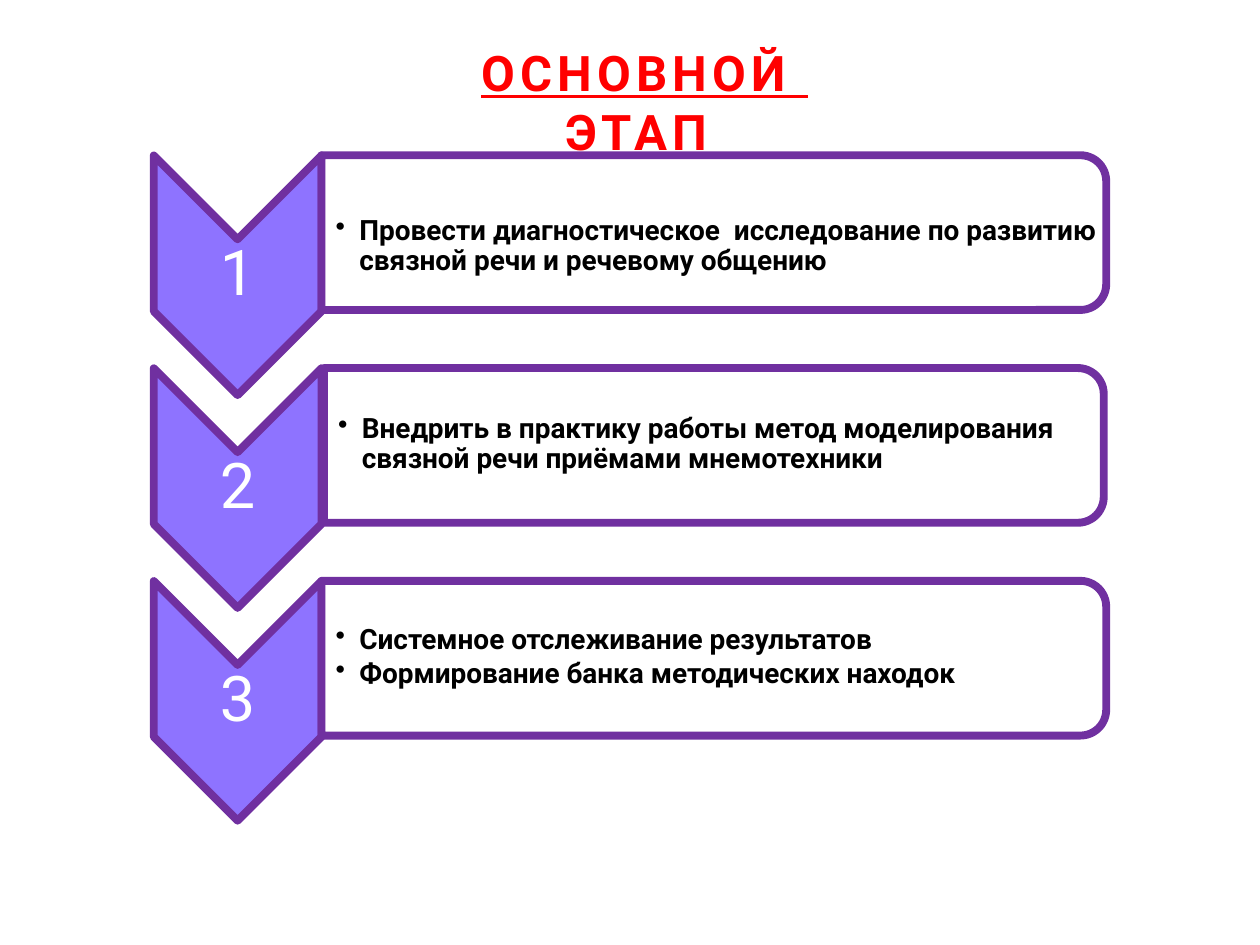
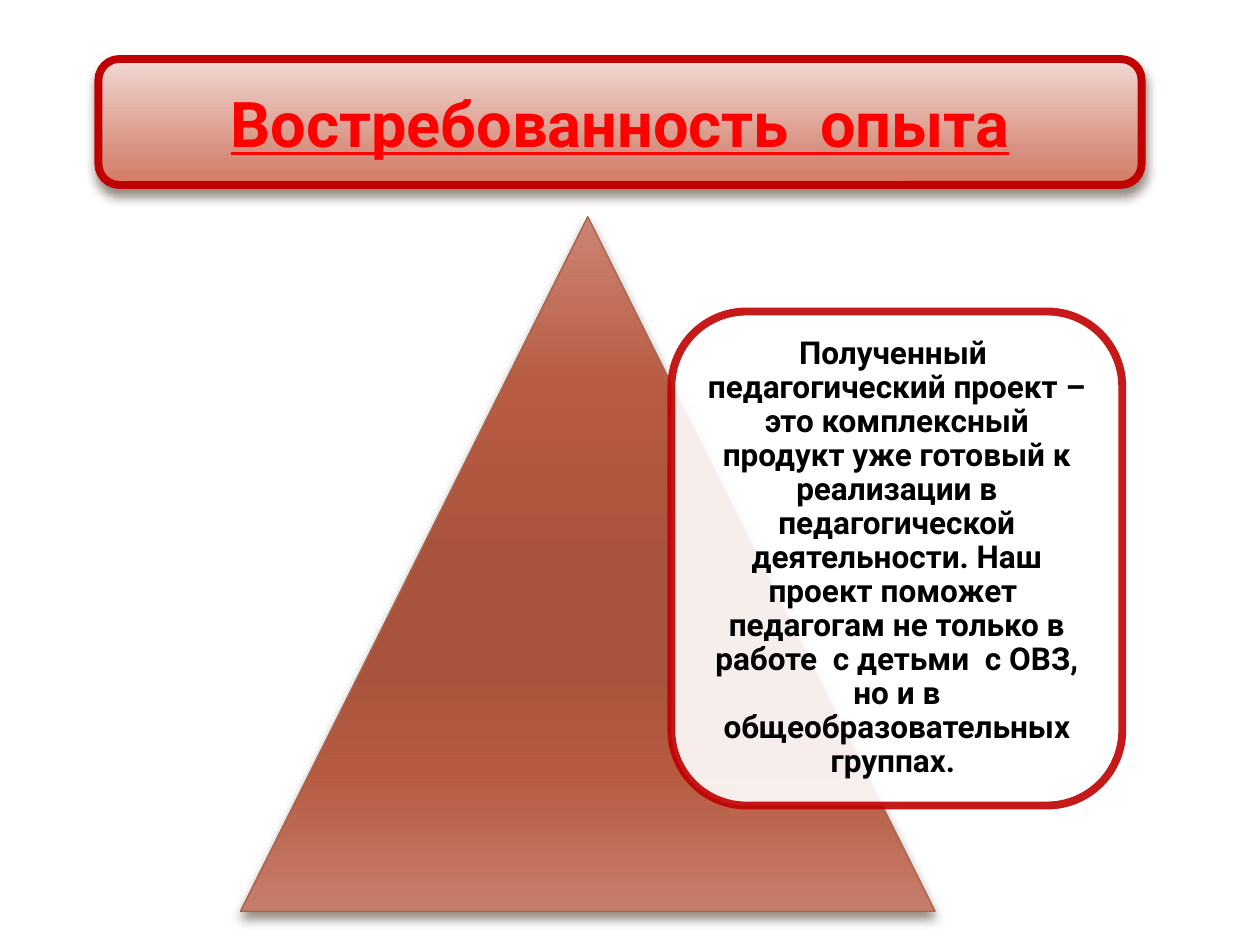
"""Builds two slides: the three steps of the main stage and the demand for the experience."""
from lxml.etree import SubElement
from pptx import Presentation
from pptx.dml.color import RGBColor
from pptx.enum.shapes import MSO_SHAPE as Preset
from pptx.enum.text import MSO_ANCHOR as Anchor, MSO_AUTO_SIZE as AutoSize, PP_ALIGN as Align
from pptx.oxml.ns import qn
from pptx.util import Cm, Pt

FONT = "Roboto"
RED = RGBColor(0xFF, 0x00, 0x00)
DARK_RED = RGBColor(0xC0, 0x00, 0x00)
BROWN = RGBColor(0xA5, 0x64, 0x4E)
SHADOW = RGBColor(0x4E, 0x3B, 0x30)
PURPLE = RGBColor(0x70, 0x30, 0xA0)
VIOLET = RGBColor(0x8E, 0x73, 0xFF)
WHITE = RGBColor(0xFF, 0xFF, 0xFF)
BLACK = RGBColor(0x00, 0x00, 0x00)
BAND_STOPS = [(0, "F1D9D4"), (72, "D89180"), (100, "D47A62")]
PYRAMID_STOPS = [(0, "CD8473"), (25, "B75B42"), (50, "AA533C"),
                 (65, "AA533C"), (80, "B65B42"), (100, "C77D6B")]

STEP_PITCH = 4.29
STEPS = [
    (15.82, 0.6, ["Провести диагностическое  исследование по развитию связной речи и речевому общению"]),
    (15.72, 0, ["Внедрить в практику работы метод моделирования связной речи приёмами мнемотехники"]),
    (15.82, 0, ["Системное отслеживание результатов", "Формирование банка методических находок"]),
]
RESULT = ("Полученный  педагогический проект – это комплексный продукт уже готовый к реализации "
          "в педагогической деятельности. Наш проект поможет  педагогам не только в работе  "
          "с детьми  с ОВЗ, но и в общеобразовательных группах. ")


class SlideBuilder:
    """Holds the deck style and the slide being built; positions are centres in centimetres."""

    def __init__(self):
        self.deck = Presentation()
        self.deck.slide_width, self.deck.slide_height = Cm(25.4), Cm(19.05)
        self.page = None

    def new_page(self):
        """Start a title-only slide."""
        self.page = self.deck.slides.add_slide(self.deck.slide_layouts[5])

    def frame(self, x, y, width, height):
        """Turn a centre and a size into left, top, width and height."""
        return Cm(x - width / 2), Cm(y - height / 2), Cm(width), Cm(height)

    def span(self, para, text, size, color, bold=False):
        """Add one run of text."""
        span = para.add_run()
        span.text = text
        span.font.name, span.font.size, span.font.bold = FONT, Pt(size), bold
        span.font.color.rgb = color
        return span

    def title(self, text, size, x, y, width, height, anchor, spacing=0):
        """Place the underlined red title above what is already drawn."""
        title = self.page.shapes.title
        title.left, title.top, title.width, title.height = self.frame(x, y, width, height)
        self.page.shapes._spTree.append(title._element)
        body = title.text_frame
        body.word_wrap, body.auto_size, body.vertical_anchor = True, AutoSize.NONE, anchor
        para = body.paragraphs[0]
        para.alignment = Align.CENTER
        span = self.span(para, text, size, RED, bold=True)
        span.font.underline = True
        span.font._element.set("spc", str(spacing * 100))

    def alpha(self, fill, percent):
        """Make a solid fill partly transparent."""
        color = fill._xPr.find(qn("a:solidFill"))[0]
        SubElement(color, qn("a:alpha"), val=str(percent * 1000))

    def shape(self, preset, x, y, width, height, line, line_width=4.5, fill=WHITE,
              stops=None, rotation=0, opacity=None, line_opacity=None, shadow=False):
        """Draw a preset shape with a solid or a vertical gradient fill."""
        shape = self.page.shapes.add_shape(preset, *self.frame(x, y, width, height))
        shape.rotation = rotation
        shape.shadow.inherit = False
        shape.line.color.rgb, shape.line.width = line, Pt(line_width)
        if stops:
            self.gradient(shape, stops)
        else:
            shape.fill.solid()
            shape.fill.fore_color.rgb = fill
        if opacity:
            self.alpha(shape.fill, opacity)
        if line_opacity:
            self.alpha(shape.line.fill, line_opacity)
        if shadow:
            effects = shape._element.spPr.find(qn("a:effectLst"))
            outer = SubElement(effects, qn("a:outerShdw"), blurRad=str(Pt(6)), dist=str(Pt(4)),
                               dir="5400000", rotWithShape="0")
            color = SubElement(outer, qn("a:srgbClr"), val=str(SHADOW))
            SubElement(color, qn("a:alpha"), val="60000")

    def gradient(self, shape, stops):
        """Fill a shape from top to bottom with the given stops."""
        shape.fill.gradient()
        shape.fill.gradient_angle = 270
        stop_list = shape._element.spPr.find(".//" + qn("a:gsLst"))
        for stop in list(stop_list):
            stop_list.remove(stop)
        for position, color in stops:
            stop = SubElement(stop_list, qn("a:gs"), pos=str(position * 1000))
            SubElement(stop, qn("a:srgbClr"), val=color)

    def text(self, lines, size, x, y, width, height, color=BLACK, bold=True,
             insets=(0.18, 0.18, 0.18, 0.18), bullets=False):
        """Add a middle-anchored text box, centred or bulleted."""
        box = self.page.shapes.add_textbox(*self.frame(x, y, width, height))
        body = box.text_frame
        body.word_wrap, body.vertical_anchor = True, Anchor.MIDDLE
        body.margin_left, body.margin_top, body.margin_right, body.margin_bottom = map(Cm, insets)
        for index, line in enumerate(lines):
            para = body.add_paragraph() if index else body.paragraphs[0]
            para.line_spacing = 0.9
            para.alignment = Align.LEFT if bullets else Align.CENTER
            if bullets:
                para.space_after = Pt(2.4)
                properties = para._p.get_or_add_pPr()
                properties.set("marL", str(Cm(0.48)))
                properties.set("indent", str(-Cm(0.48)))
                SubElement(properties, qn("a:buChar"), char="•")
            self.span(para, line, size, color, bold)


def build_main_stage(builder):
    """Build the slide with three numbered steps."""
    builder.new_page()
    builder.title("ОСНОВНОЙ  ЭТАП ", 28, 13, 1.46, 10.21, 1.45, Anchor.TOP, spacing=3)
    for index, (width, top_inset, lines) in enumerate(STEPS):
        arrow_y = 5.55 + index * STEP_PITCH
        panel_y = 4.69 + index * STEP_PITCH
        builder.shape(Preset.CHEVRON, 4.79, arrow_y, 4.83, 3.38, PURPLE, fill=VIOLET, rotation=90)
        builder.text([str(index + 1)], 36, 4.79, arrow_y, 3.38, 1.45, WHITE, bold=False,
                     insets=(0.08, 0.08, 0.08, 0.08))
        builder.shape(Preset.ROUND_2_SAME_RECTANGLE, 14.39, panel_y, 3.12, width, PURPLE,
                      rotation=90, opacity=90)
        builder.text(lines, 16, 14.31, panel_y, width - 0.15, 2.82,
                     insets=(0.29, top_inset, 0.03, 0.03), bullets=True)


def build_demand(builder):
    """Build the slide with the pyramid and the result of the project."""
    builder.new_page()
    band = (12.5, 2.46, 21.03, 2.54)
    builder.shape(Preset.ROUNDED_RECTANGLE, *band, DARK_RED, stops=BAND_STOPS, shadow=True)
    builder.title("Востребованность  опыта", 36, *band, Anchor.MIDDLE)
    builder.shape(Preset.ISOSCELES_TRIANGLE, 11.85, 11.37, 14, 14, BROWN, 0.79,
                  stops=PYRAMID_STOPS, shadow=True)
    builder.shape(Preset.ROUNDED_RECTANGLE, 18.08, 11.26, 9.09, 9.96, DARK_RED,
                  opacity=90, line_opacity=90)
    builder.text([RESULT], 18, 18.08, 11.26, 8.2, 9.07)


def main():
    """Build and save the deck."""
    builder = SlideBuilder()
    build_main_stage(builder)
    build_demand(builder)
    builder.deck.save("out.pptx")


if __name__ == "__main__":
    main()
